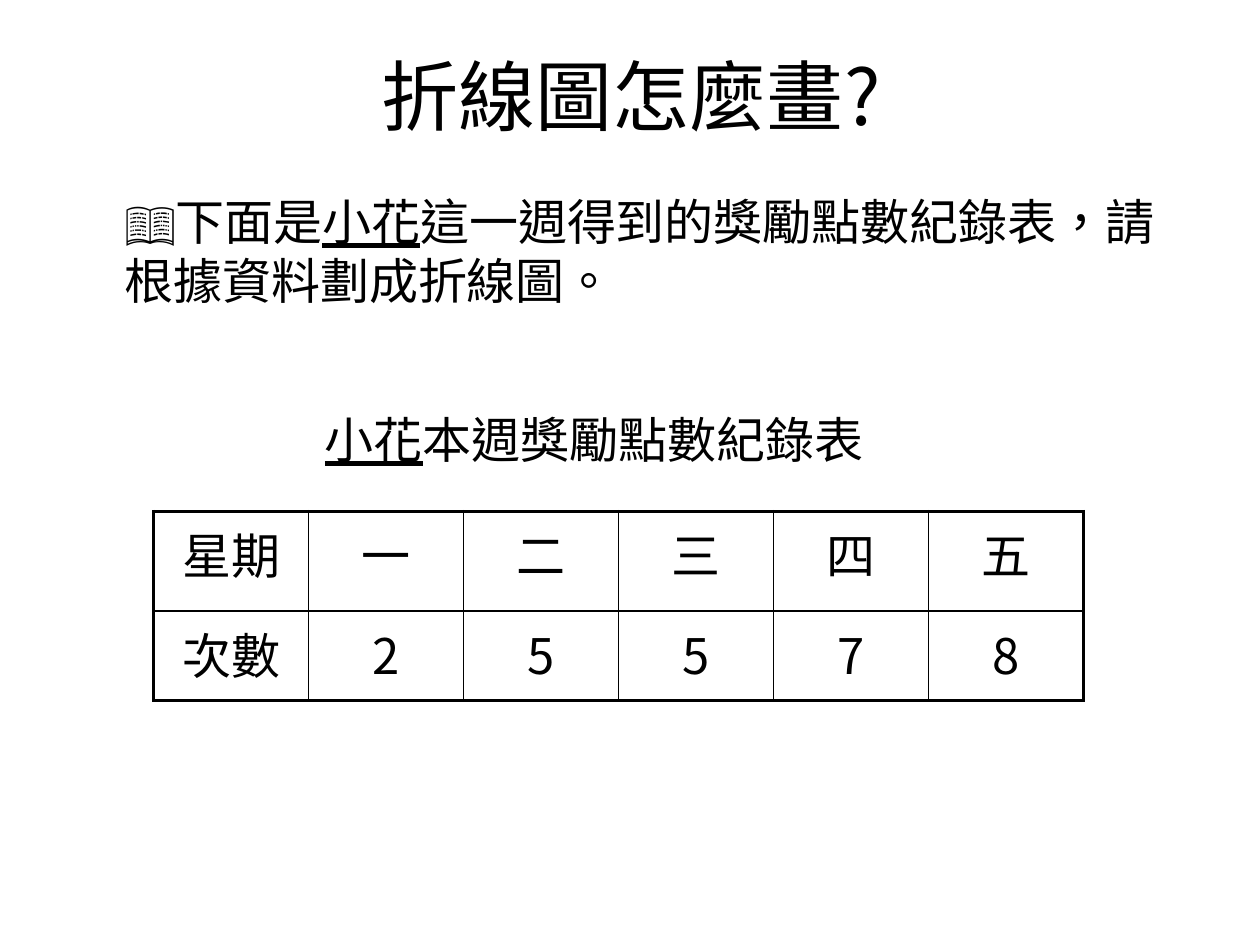
from dataclasses import dataclass

import pptx
import pptx.dml.color
import pptx.enum.text
import pptx.oxml.ns
import pptx.util
from lxml import etree

Inches = pptx.util.Inches
Align = pptx.enum.text.PP_ALIGN
Anchor = pptx.enum.text.MSO_ANCHOR


@dataclass(frozen=True)
class Theme:
    ink: str = "000000"
    text_font: str = "Calibri"
    mark_font: str = "Noto Sans CJK TC"
    table_font: str = "Noto Sans CJK SC"
    title_size: float = 44
    text_size: float = 28
    space_before: float = 5.6
    outer_line: float = 2.25
    inner_line: float = 1


THEME = Theme()


@dataclass(frozen=True)
class Span:
    text: str
    font: str = THEME.text_font
    size: float = THEME.text_size
    underline: bool = False


@dataclass(frozen=True)
class TextBlock:
    left: float
    top: float
    width: float
    height: float
    spans: tuple
    align: Align = Align.LEFT
    anchor: Anchor = Anchor.TOP
    wrap: bool = True
    hanging: float = 0
    space_before: float = 0


def add_span(para, span: Span) -> None:
    run = para.add_run()
    run.text = span.text
    formats = {"name": span.font, "size": pptx.util.Pt(span.size), "underline": span.underline}
    for name, value in formats.items():
        setattr(run.font, name, value)
    run.font.color.rgb = pptx.dml.color.RGBColor.from_string(THEME.ink)
    properties = run.font._element
    properties.set("lang", "zh-TW")
    east_asian = etree.Element(pptx.oxml.ns.qn("a:ea"), typeface=span.font)
    properties.find(pptx.oxml.ns.qn("a:latin")).addnext(east_asian)


def add_text(page, block: TextBlock) -> None:
    box = page.shapes.add_textbox(
        *(Inches(n) for n in (block.left, block.top, block.width, block.height)))
    frame = box.text_frame
    formats = {"word_wrap": block.wrap, "vertical_anchor": block.anchor}
    for name, value in formats.items():
        setattr(frame, name, value)
    para = frame.paragraphs[0]
    para.alignment = block.align
    para.space_before = pptx.util.Pt(block.space_before)
    if block.hanging:
        para._p.get_or_add_pPr().set("marL", str(Inches(block.hanging)))
    for span in block.spans:
        add_span(para, span)


def add_borders(cell, widths: dict) -> None:
    properties = cell._tc.get_or_add_tcPr()
    for index, (side, width) in enumerate(widths.items()):
        line = etree.Element(pptx.oxml.ns.qn(f"a:ln{side}"), w=str(pptx.util.Pt(width)))
        fill = etree.SubElement(line, pptx.oxml.ns.qn("a:solidFill"))
        etree.SubElement(fill, pptx.oxml.ns.qn("a:srgbClr"), val=THEME.ink)
        properties.insert(index, line)


def add_record_table(page, rows: list, left: float, top: float,
                     column_width: float, heights: list) -> None:
    last_row, last_column = len(rows) - 1, len(rows[0]) - 1
    table = page.shapes.add_table(
        len(rows), len(rows[0]), Inches(left), Inches(top),
        Inches(column_width * len(rows[0])), Inches(sum(heights))).table
    for name in ("first_row", "horz_banding"):
        setattr(table, name, False)
    for column in table.columns:
        column.width = Inches(column_width)
    for r, (values, height) in enumerate(zip(rows, heights)):
        table.rows[r].height = Inches(height)
        for c, value in enumerate(values):
            cell = table.cell(r, c)
            cell.fill.background()
            para = cell.text_frame.paragraphs[0]
            para.alignment = Align.CENTER
            para.space_before = pptx.util.Pt(THEME.space_before)
            add_span(para, Span(value, THEME.table_font))
            # Heavy lines run around the outside only
            outer = {"L": c == 0, "R": c == last_column, "T": r == 0, "B": r == last_row}
            add_borders(cell, {side: THEME.outer_line if edge else THEME.inner_line
                               for side, edge in outer.items()})


def main() -> None:
    deck = pptx.Presentation()
    deck.slide_width, deck.slide_height = Inches(10), Inches(7.5)
    page = deck.slides.add_slide(deck.slide_layouts[6])
    student = Span("小花", underline=True)

    # Title, task and table caption
    blocks = [
        TextBlock(0.51, 0.13, 9, 1.25,
                  (Span("折線圖怎麼畫", size=THEME.title_size),
                   Span("?", THEME.mark_font, THEME.title_size)),
                  align=Align.CENTER, anchor=Anchor.MIDDLE),
        TextBlock(0.51, 1.47, 8.91, 1.02,
                  (Span("📖下面是"), student,
                   Span("這一週得到的獎勵點數紀錄表，請根據資料劃成折線圖。")),
                  hanging=0.38, space_before=THEME.space_before),
        TextBlock(2.48, 3.2, 4.52, 0.57,
                  (student, Span("本週獎勵點數紀錄表")), wrap=False),
    ]
    for block in blocks:
        add_text(page, block)

    # Points for each weekday
    rows = [["星期", "一", "二", "三", "四", "五"],
            ["次數", "2", "5", "5", "7", "8"]]
    add_record_table(page, rows, left=1.22, top=4.06, column_width=1.23, heights=[0.79, 0.71])

    deck.save("out.pptx")


if __name__ == "__main__":
    main()
